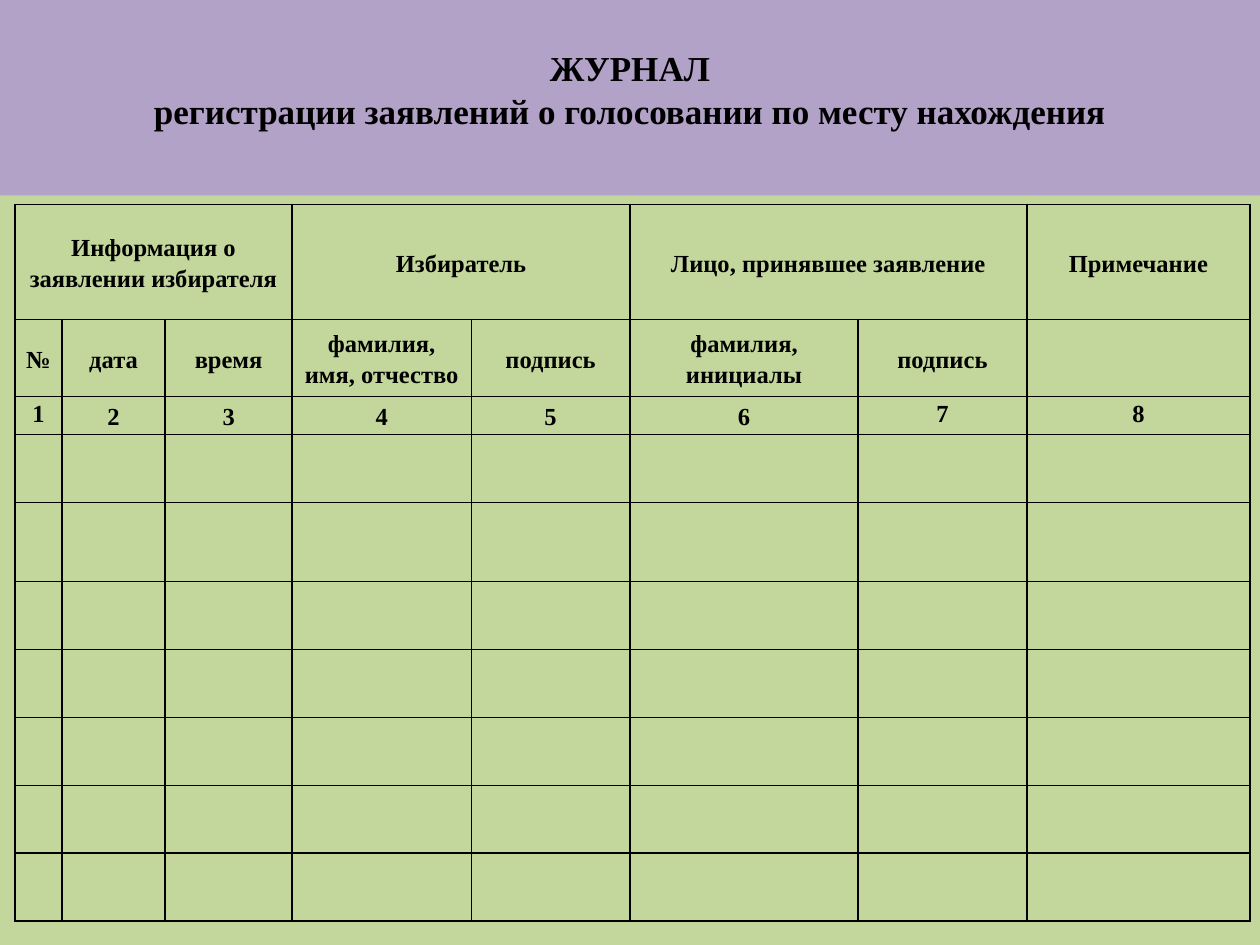
from pptx import Presentation
from pptx.dml.color import RGBColor
from pptx.enum.text import MSO_ANCHOR, MSO_AUTO_SIZE, PP_ALIGN
from pptx.oxml.ns import qn
from pptx.util import Cm, Pt
from lxml.etree import SubElement

TITLE = "ЖУРНАЛ\vрегистрации заявлений о голосовании по месту нахождения"
# Heading groups: text and number of columns below
GROUPS = [
    ("Информация о заявлении избирателя", 3),
    ("Избиратель", 2),
    ("Лицо, принявшее заявление", 2),
    ("Примечание", 1),
]
HEADS = ["№", "дата", "время", "фамилия, имя, отчество", "подпись",
         "фамилия, инициалы", "подпись", ""]
COLS = [0.95, 2.08, 2.56, 3.61, 3.2, 4.6, 3.4, 4.5]
ROWS = [2.32, 1.55, 0.77, 1.37, 1.59] + [1.37] * 5
TOPS = {0, 6, 7}  # columns whose number sits at the top of its cell

THEME = {
    "font": "Times New Roman",
    "ink": "000000",
    "page": "C3D69B",
    "band": "B3A2C7",
    "title": 20,
    "cell": 14,
    "line": 1,
}


def rgb(name):
    return RGBColor.from_string(THEME[name])


def put(obj, form):
    for key, val in form.items():
        setattr(obj, key, val)


def style(para, size, space):
    put(para, {"alignment": PP_ALIGN.CENTER, "line_spacing": space})
    put(para.font, {"name": THEME["font"], "size": Pt(THEME[size]), "bold": True})
    para.font.color.rgb = rgb("ink")


def frame(cell):
    """Draw the four borders of a cell and leave it unfilled."""
    props = cell._tc.get_or_add_tcPr()
    for side in ("lnL", "lnR", "lnT", "lnB"):
        line = SubElement(props, qn(f"a:{side}"), w=str(Pt(THEME["line"])))
        fill = SubElement(line, qn("a:solidFill"))
        SubElement(fill, qn("a:srgbClr"), val=THEME["ink"])
    cell.fill.background()


def add_title(slide):
    head = slide.shapes.title
    put(head, {"left": 0, "top": 0, "width": Cm(25.4), "height": Cm(3.94)})
    head.fill.solid()
    head.fill.fore_color.rgb = rgb("band")
    text = head.text_frame
    put(text, {"text": TITLE, "word_wrap": True,
               "auto_size": MSO_AUTO_SIZE.NONE,
               "vertical_anchor": MSO_ANCHOR.MIDDLE,
               "margin_top": Cm(0.13), "margin_bottom": Cm(0.51)})
    style(text.paragraphs[0], "title", 1.04)


def add_log(slide):
    table = slide.shapes.add_table(
        len(ROWS), len(COLS), Cm(0.3), Cm(4.12),
        Cm(sum(COLS)), Cm(sum(ROWS))).table
    put(table, {"first_row": False, "horz_banding": False})
    for col, wide in zip(table.columns, COLS):
        col.width = Cm(wide)
    for row, high in zip(table.rows, ROWS):
        row.height = Cm(high)

    top = []
    for text, span in GROUPS:
        start = len(top)
        top += [text] + [""] * (span - 1)
        if span > 1:
            table.cell(0, start).merge(table.cell(0, start + span - 1))
    nums = [str(n) for n in range(1, len(COLS) + 1)]
    words = [top, HEADS, nums]

    for r in range(len(ROWS)):
        for c in range(len(COLS)):
            cell = table.cell(r, c)
            high = r == 2 and c in TOPS
            put(cell, {
                "margin_left": Cm(0.18), "margin_right": Cm(0.18),
                "margin_top": 0, "margin_bottom": 0,
                "vertical_anchor": MSO_ANCHOR.TOP if high else MSO_ANCHOR.MIDDLE,
            })
            if r < len(words) and words[r][c]:
                cell.text = words[r][c]
            style(cell.text_frame.paragraphs[0], "cell", 1.15)
            frame(cell)


def main():
    deck = Presentation()
    put(deck, {"slide_width": Cm(25.4), "slide_height": Cm(19.05)})
    slide = deck.slides.add_slide(deck.slide_layouts[5])
    fill = slide.background.fill
    fill.solid()
    fill.fore_color.rgb = rgb("page")
    add_title(slide)
    add_log(slide)
    deck.save("out.pptx")


if __name__ == "__main__":
    main()
